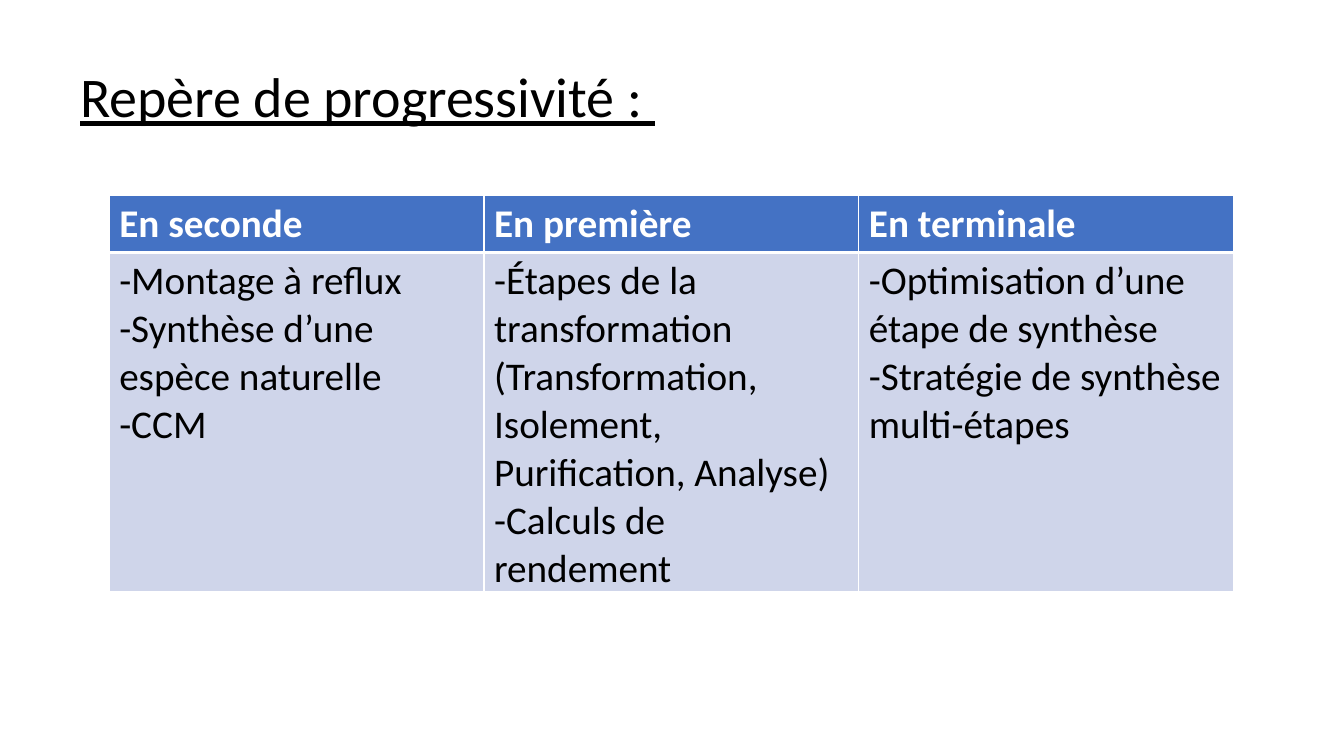
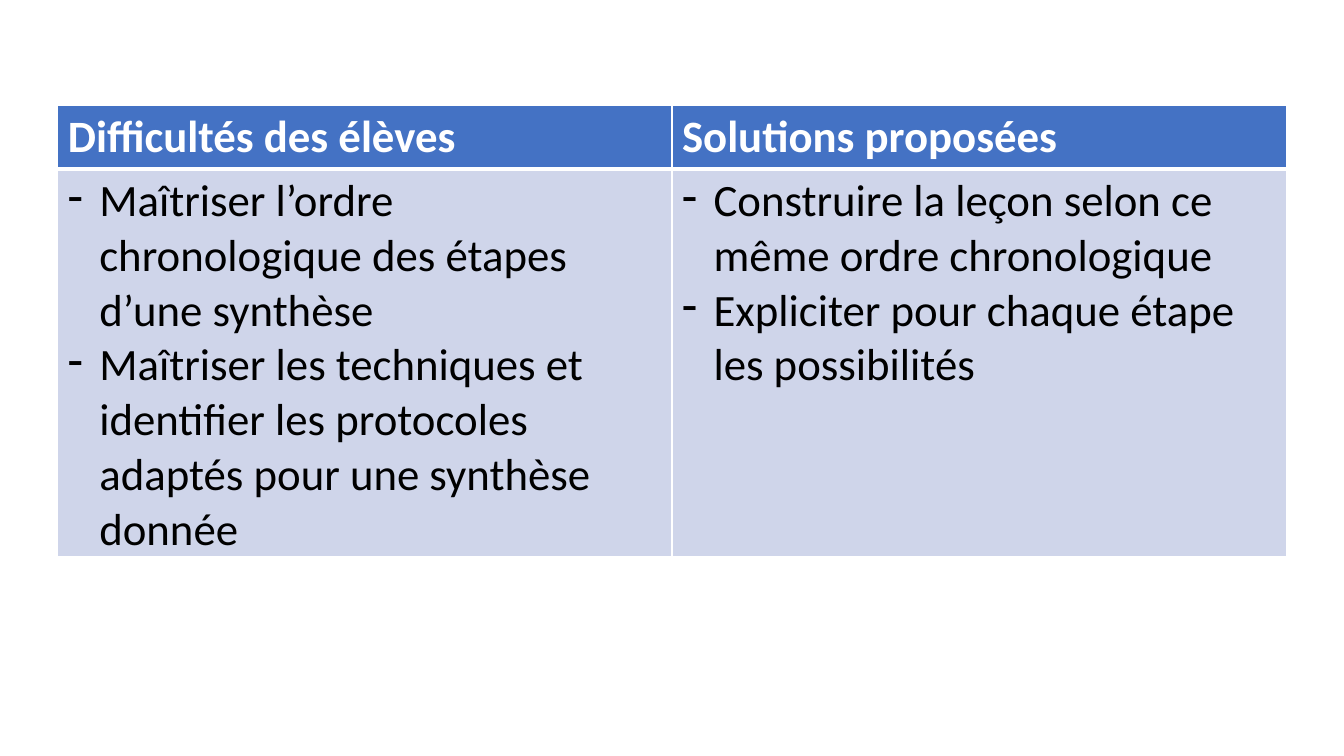
import pptx
import pptx.dml.color
import pptx.enum.text
import pptx.oxml.ns
import pptx.oxml.xmlchemy
import pptx.util
from dataclasses import dataclass
from lxml import etree

RGB = pptx.dml.color.RGBColor
BLACK = RGB(0x00, 0x00, 0x00)
WHITE = RGB(0xFF, 0xFF, 0xFF)
BLUE = RGB(0x44, 0x72, 0xC4)
PALE = RGB(0xCF, 0xD5, 0xEA)
FONT = "Calibri"
THIN, THICK = 1, 3
INDENT = 30


@dataclass(frozen=True)
class Column:
    head: str
    items: tuple[str, ...]


@dataclass(frozen=True)
class Grid:
    left: int
    top: int
    width: int
    heights: tuple[int, int]
    size: int
    columns: tuple[Column, ...]
    bullet: str = ""


LEVELS = Grid(104, 186, 357, (54, 323), 28, (
    Column("En seconde", (
        "-Montage à reflux",
        "-Synthèse d’une espèce naturelle",
        "-CCM")),
    Column("En première", (
        "-Étapes de la transformation (Transformation, Isolement, "
        "Purification, Analyse)",
        "-Calculs de rendement")),
    Column("En terminale", (
        "-Optimisation d’une étape de synthèse",
        "-Stratégie de synthèse multi-étapes")),
))

ISSUES = Grid(55, 100, 585, (60, 369), 32, (
    Column("Difficultés des élèves", (
        "Maîtriser l’ordre chronologique des étapes d’une synthèse",
        "Maîtriser les techniques et identifier les protocoles adaptés "
        "pour une synthèse donnée")),
    Column("Solutions proposées", (
        "Construire la leçon selon ce même ordre chronologique",
        "Expliciter pour chaque étape les possibilités")),
), bullet="-")


def px(count: int) -> int:
    """Turn px (96 to the inch) into EMU."""
    return pptx.util.Emu(count * 9525)


def add(parent, tag: str, **attrs):
    """Append a DrawingML element."""
    return etree.SubElement(parent, pptx.oxml.ns.qn(tag), attrs)


def write(frame, lines: tuple[str, ...], *, size: int, color: RGB = BLACK,
          bold: bool = False, under: bool = False, bullet: str = "") -> None:
    """Fill a text frame, one paragraph per line."""
    for i, line in enumerate(lines):
        para = frame.add_paragraph() if i else frame.paragraphs[0]
        if bullet:
            props = para._p.get_or_add_pPr()
            props.set("marL", str(px(INDENT)))
            props.set("indent", str(-px(INDENT)))
            add(props, "a:buFontTx")
            add(props, "a:buChar", char=bullet)
        run = para.add_run()
        run.text = line
        font = run.font
        font.name, font.size = FONT, pptx.util.Pt(size)
        font.bold, font.underline = bold, under
        font.color.rgb = color


def edge(cell, top: int, bottom: int) -> None:
    """Draw white borders; side lines are always thin."""
    props = cell._tc.get_or_add_tcPr()
    for side, width in zip("LRTB", (THIN, THIN, top, bottom)):
        line = add(props, f"a:ln{side}", w=str(pptx.util.Pt(width)))
        add(add(line, "a:solidFill"), "a:srgbClr", val=str(WHITE))


def paint(cell, fill: RGB) -> None:
    cell.fill.solid()
    cell.fill.fore_color.rgb = fill


def draw(slide, grid: Grid) -> None:
    """Draw a table with a header row and a body row."""
    count = len(grid.columns)
    table = slide.shapes.add_table(
        2, count, px(grid.left), px(grid.top),
        px(grid.width * count), px(sum(grid.heights))).table
    for row, height in zip(table.rows, grid.heights):
        row.height = px(height)
    for i, column in enumerate(grid.columns):
        table.columns[i].width = px(grid.width)
        head, body = table.cell(0, i), table.cell(1, i)
        edge(head, THIN, THICK)
        edge(body, THICK, THIN)
        paint(head, BLUE)
        paint(body, PALE)
        write(head.text_frame, (column.head,), size=grid.size,
              color=WHITE, bold=True)
        write(body.text_frame, column.items, size=grid.size,
              bullet=grid.bullet)


def title(slide, text: str) -> None:
    box = slide.shapes.add_textbox(px(67), px(54), px(572), px(74))
    frame = box.text_frame
    frame.word_wrap = False
    frame.auto_size = pptx.enum.text.MSO_AUTO_SIZE.SHAPE_TO_FIT_TEXT
    write(frame, (text,), size=40, under=True)


def main() -> None:
    deck = pptx.Presentation()
    deck.slide_width, deck.slide_height = px(1280), px(720)
    blank = deck.slide_layouts[6]

    # Progression over the three years
    slide = deck.slides.add_slide(blank)
    title(slide, "Repère de progressivité : ")
    draw(slide, LEVELS)

    # Difficulties and solutions
    draw(deck.slides.add_slide(blank), ISSUES)

    deck.save("out.pptx")


if __name__ == "__main__":
    main()
